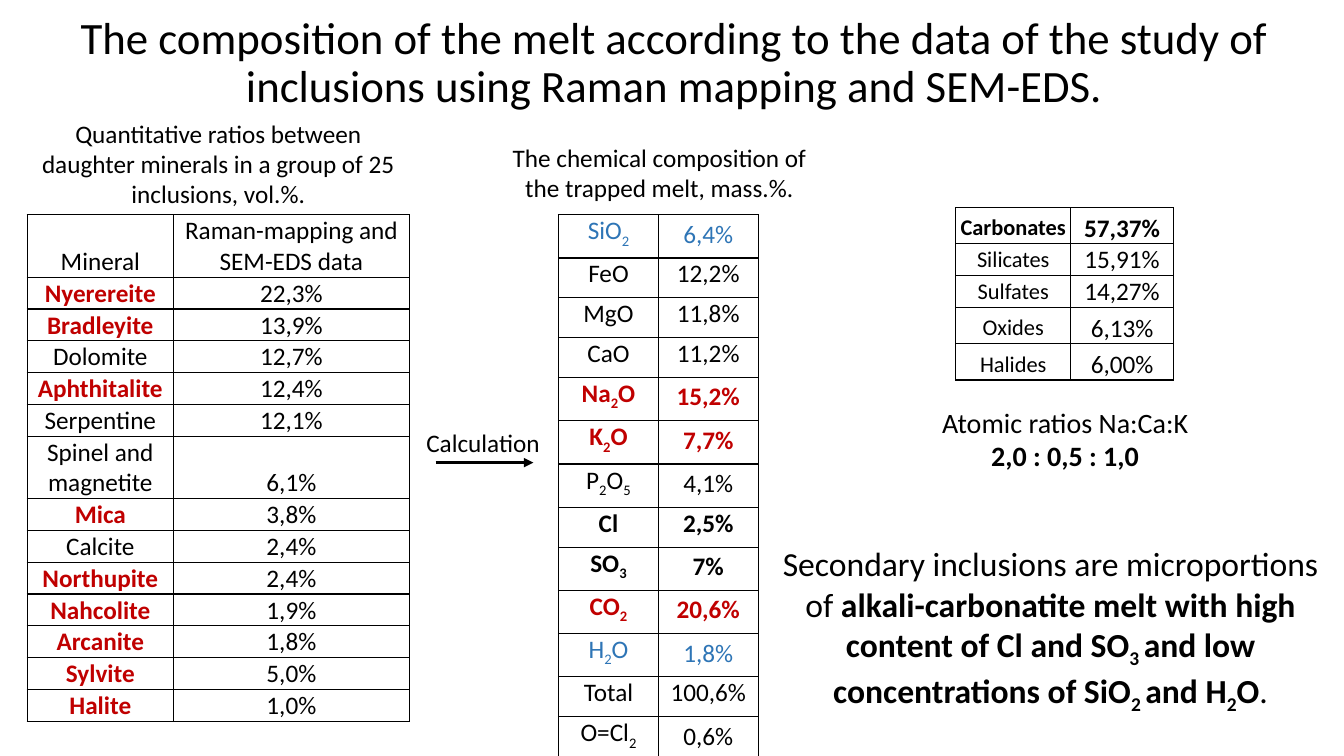
from pptx import Presentation
from pptx.util import Inches, Pt
from pptx.dml.color import RGBColor
from pptx.enum.shapes import MSO_CONNECTOR
from pptx.enum.text import MSO_ANCHOR, MSO_AUTO_SIZE, PP_ALIGN
from pptx.oxml import parse_xml
from pptx.oxml.ns import nsdecls
from lxml import etree

COLORS = {"black": "000000", "white": "FFFFFF", "red": "C00000", "blue": "2E75B6"}
# Style name: colour and bold
STYLES = {
    "plain": ("black", False),
    "bold": ("black", True),
    "red": ("red", True),
    "blue": ("blue", False),
}


def write(para, text, size, style="plain"):
    """Add styled runs to a centred paragraph; text between tildes is subscript."""
    color, bold = STYLES[style]
    para.alignment = PP_ALIGN.CENTER
    for index, piece in enumerate(text.split("~")):
        if not piece:
            continue
        span = para.add_run()
        span.text = piece
        span.font.name = "Calibri"
        span.font.size = Pt(size)
        span.font.bold = bold
        span.font.color.rgb = RGBColor.from_string(COLORS[color])
        if index % 2:
            span.font._element.set("baseline", "-25000")


def add_box(page, left, top, width, height, wrap=True):
    """Add an empty text box and return its text frame."""
    box = page.shapes.add_textbox(Inches(left), Inches(top), Inches(width), Inches(height))
    frame = box.text_frame
    frame.word_wrap = wrap
    frame.auto_size = MSO_AUTO_SIZE.SHAPE_TO_FIT_TEXT
    return frame


deck = Presentation()
deck.slide_width, deck.slide_height = Inches(13.33), Inches(7.5)
page = deck.slides.add_slide(deck.slide_layouts[6])

# Title
title = add_box(page, 0.05, 0.01, 13.28, 1.25)
title.auto_size = MSO_AUTO_SIZE.NONE
title.vertical_anchor = MSO_ANCHOR.MIDDLE
title.paragraphs[0].line_spacing = 0.9
write(title.paragraphs[0], "The composition of the melt according to the data of the study of "
      "inclusions using Raman mapping and SEM-EDS.", 32)

# Table data: label, value, label style, value style
minerals = [
    ("Mineral", "Raman-mapping and SEM-EDS data", "plain", "plain"),
    ("Nyerereite", "22,3%", "red", "plain"),
    ("Bradleyite", "13,9%", "red", "plain"),
    ("Dolomite", "12,7%", "plain", "plain"),
    ("Aphthitalite", "12,4%", "red", "plain"),
    ("Serpentine", "12,1%", "plain", "plain"),
    ("Spinel and magnetite", "6,1%", "plain", "plain"),
    ("Mica", "3,8%", "red", "plain"),
    ("Calcite", "2,4%", "plain", "plain"),
    ("Northupite", "2,4%", "red", "plain"),
    ("Nahcolite", "1,9%", "red", "plain"),
    ("Arcanite", "1,8%", "red", "plain"),
    ("Sylvite", "5,0%", "red", "plain"),
    ("Halite", "1,0%", "red", "plain"),
]
mineral_classes = [
    ("Carbonates", "57,37%", "bold", "bold"),
    ("Silicates", "15,91%", "plain", "plain"),
    ("Sulfates", "14,27%", "plain", "plain"),
    ("Oxides", "6,13%", "plain", "plain"),
    ("Halides", "6,00%", "plain", "plain"),
]
melt = [
    ("SiO~2~", "6,4%", "blue", "blue"),
    ("FeO", "12,2%", "plain", "plain"),
    ("MgO", "11,8%", "plain", "plain"),
    ("CaO", "11,2%", "plain", "plain"),
    ("Na~2~O", "15,2%", "red", "red"),
    ("K~2~O", "7,7%", "red", "red"),
    ("P~2~O~5~", "4,1%", "plain", "plain"),
    ("Cl", "2,5%", "bold", "bold"),
    ("SO~3~", "7%", "bold", "bold"),
    ("CO~2~", "20,6%", "red", "red"),
    ("H~2~О", "1,8%", "blue", "blue"),
    ("Total", "100,6%", "plain", "plain"),
    ("O=Cl~2~", "0,6%", "plain", "plain"),
]

# Tables: rows, left, top, column widths, row heights, label size,
# then (top, bottom) margins of the label and value cells
mineral_heights = [0.62] + [0.26] * 5 + [0.5] + [0.26] * 7
tables = [
    (minerals, 0.27, 2.13, (1.45, 2.34), mineral_heights, 18, ((0.01, 0), (0.01, 0))),
    (mineral_classes, 9.48, 2.06, (1.14, 1.02), [0.36, 0.21, 0.21, 0.36, 0.36], 16,
     ((0.02, 0.02), (0.01, 0))),
    (melt, 5.54, 2.13, (0.99, 0.99), [0.26] * 13, 18, ((0.01, 0.08), (0.01, 0.08))),
]
for rows, left, top, widths, heights, label_size, margins in tables:
    table = page.shapes.add_table(len(rows), 2, Inches(left), Inches(top),
                                  Inches(sum(widths)), Inches(sum(heights))).table
    table.first_row = table.horz_banding = False
    for column, width in zip(table.columns, widths):
        column.width = Inches(width)
    for row, height, (label, value, *styles) in zip(table.rows, heights, rows):
        row.height = Inches(height)
        cells = zip(row.cells, (label, value), styles, (label_size, 18), margins)
        for cell, text, style, size, (above, below) in cells:
            cell.vertical_anchor = MSO_ANCHOR.BOTTOM
            cell.margin_left = cell.margin_right = Inches(0.01)
            cell.margin_top, cell.margin_bottom = Inches(above), Inches(below)
            properties = cell._tc.get_or_add_tcPr()
            for side in "LRTB":
                properties.append(parse_xml(
                    f'<a:ln{side} {nsdecls("a")} w="12700"><a:solidFill>'
                    f'<a:srgbClr val="{COLORS["black"]}"/></a:solidFill></a:ln{side}>'))
            cell.fill.solid()
            cell.fill.fore_color.rgb = RGBColor.from_string(COLORS["white"])
            write(cell.text_frame.paragraphs[0], text, size, style)

# Table captions
captions = [
    ("Quantitative ratios between daughter minerals in a group of 25 inclusions, vol.%.",
     (0.18, 1.12, 3.97, 1.01)),
    ("The chemical composition of the trapped melt, mass.%.", (4.97, 1.36, 3.14, 0.71)),
]
for text, place in captions:
    write(add_box(page, *place).paragraphs[0], text, 18)

# Calculation arrow and its label
arrow = page.shapes.add_connector(MSO_CONNECTOR.STRAIGHT, Inches(4.32), Inches(4.59),
                                  Inches(5.29), Inches(4.59))
arrow.line.color.rgb = RGBColor.from_string(COLORS["black"])
arrow.line.width = Pt(2.25)
arrow.line._get_or_add_ln().append(parse_xml(f'<a:tailEnd {nsdecls("a")} type="triangle"/>'))
etree.SubElement(arrow._element.spPr,
                 "{http://schemas.openxmlformats.org/drawingml/2006/main}effectLst")
calculation = add_box(page, 4.13, 4.19, 1.34, 0.4, wrap=False).paragraphs[0]
write(calculation, "Calculation", 18)
calculation.alignment = PP_ALIGN.LEFT

# Atomic ratios
ratios = add_box(page, 9.23, 3.97, 2.67, 0.77, wrap=False)
write(ratios.paragraphs[0], "Atomic ratios Na:Ca:K", 20)
write(ratios.add_paragraph(), "2,0 : 0,5 : 1,0", 20, "bold")

# Conclusion
conclusion = add_box(page, 7.6, 5.34, 5.64, 1.72).paragraphs[0]
write(conclusion, "Secondary inclusions are microportions of ", 24)
write(conclusion, "alkali-carbonatite melt with high content of Cl and SO~3 ~and low "
      "concentrations of SiO~2 ~and H~2~O", 24, "bold")
write(conclusion, ".", 24)

deck.save("out.pptx")
